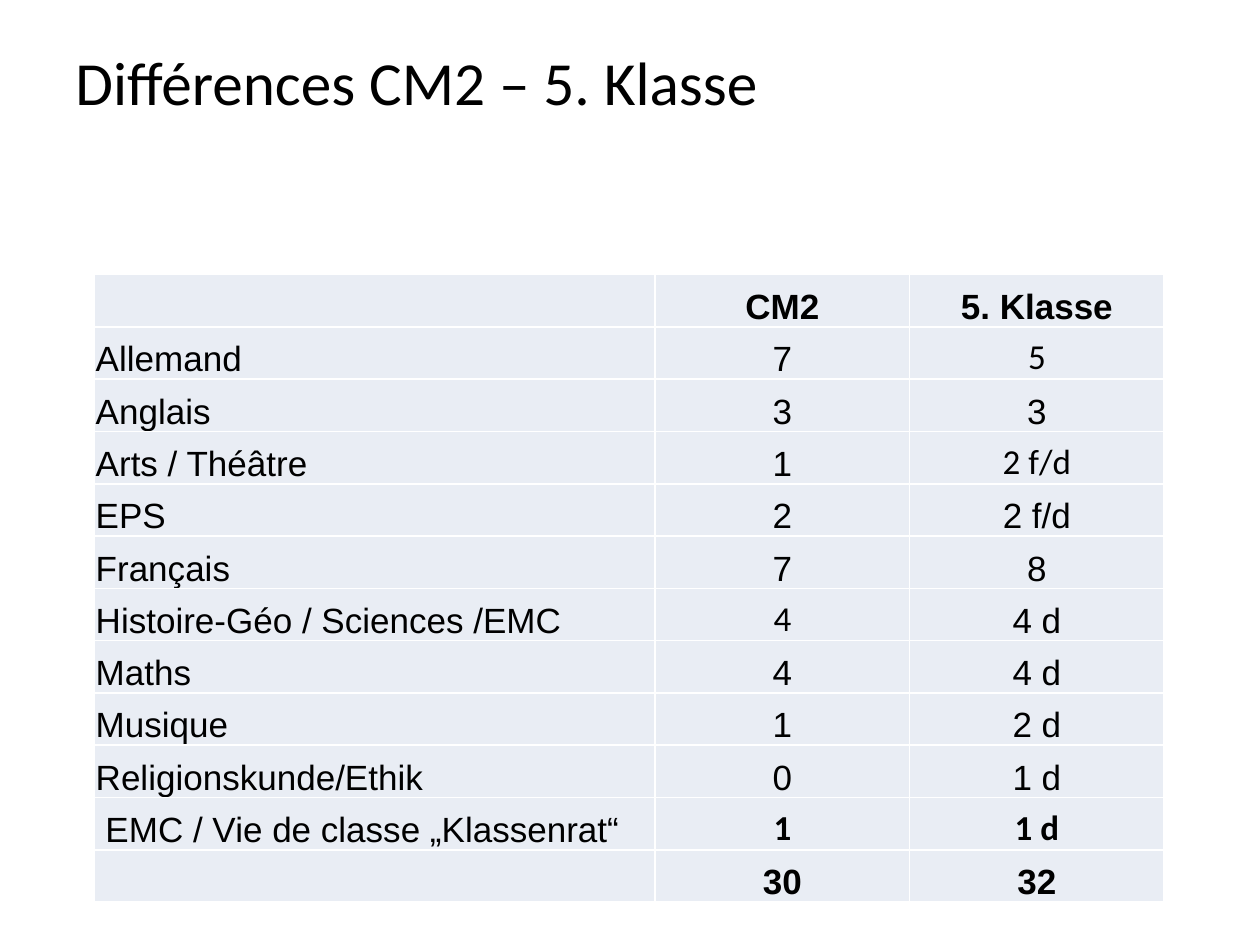
from dataclasses import dataclass

from lxml import etree
from pptx import Presentation
from pptx.dml.color import RGBColor
from pptx.enum.text import MSO_ANCHOR, PP_ALIGN
from pptx.oxml.ns import qn
from pptx.util import Inches, Pt

LEFT, CENTER = PP_ALIGN.LEFT, PP_ALIGN.CENTER
TOP, BOTTOM = MSO_ANCHOR.TOP, MSO_ANCHOR.BOTTOM
BLACK = RGBColor(0x00, 0x00, 0x00)
WHITE = RGBColor(0xFF, 0xFF, 0xFF)
PALE_BLUE = RGBColor(0xE9, 0xED, 0xF4)
COLUMN_WIDTHS = (4.45, 2.02, 2.02)
TABLE_HEIGHT = 4.98
CELL_FORMAT = {
    "margin_left": Inches(0.01),
    "margin_right": Inches(0.01),
    "margin_top": Inches(0.01),
    "margin_bottom": 0,
    "vertical_anchor": BOTTOM,
}


@dataclass(frozen=True)
class Entry:
    text: str
    font: str = "Arial"
    bold: bool = False


@dataclass(frozen=True)
class Row:
    subject: str
    cm2: Entry
    klasse: Entry


ROWS = (
    Row("", Entry("CM2", bold=True), Entry("5. Klasse", bold=True)),
    Row("Allemand", Entry("7"), Entry("5", "Calibri")),
    Row("Anglais", Entry("3"), Entry("3")),
    Row("Arts / Théâtre", Entry("1"), Entry("2 f/d", "Calibri")),
    Row("EPS", Entry("2"), Entry("2 f/d")),
    Row("Français", Entry("7"), Entry("8")),
    Row("Histoire-Géo / Sciences /EMC", Entry("4", "Calibri"), Entry("4 d")),
    Row("Maths", Entry("4"), Entry("4 d")),
    Row("Musique", Entry("1"), Entry("2 d")),
    Row("Religionskunde/Ethik", Entry("0"), Entry("1 d")),
    Row(" EMC / Vie de classe „Klassenrat“", Entry("1", "Calibri", True), Entry("1 d", "Calibri", True)),
    Row("", Entry("30", bold=True), Entry("32", bold=True)),
)


def write(p, entry: Entry, size: float, align) -> None:
    p.alignment = align
    if not entry.text:
        return
    r = p.add_run()
    r.text = entry.text
    for name, value in {"name": entry.font, "size": Pt(size), "bold": entry.bold}.items():
        setattr(r.font, name, value)
    r.font.color.rgb = BLACK


def add_borders(cell) -> None:
    tc_pr = cell._tc.get_or_add_tcPr()
    for i, side in enumerate(("lnL", "lnR", "lnT", "lnB")):
        ln = etree.Element(qn(f"a:{side}"), w=str(Pt(1)))
        fill = etree.SubElement(ln, qn("a:solidFill"))
        etree.SubElement(fill, qn("a:srgbClr"), val=str(WHITE))
        tc_pr.insert(i, ln)


def add_title(s, text: str) -> None:
    tf = s.shapes.add_textbox(Inches(0.5), Inches(0.3), Inches(9), Inches(1.25)).text_frame
    tf.word_wrap = True
    tf.vertical_anchor = TOP
    write(tf.paragraphs[0], Entry(text, "Calibri"), 35, LEFT)


def add_hours_table(s, rows: tuple[Row, ...]) -> None:
    table = s.shapes.add_table(
        len(rows), len(COLUMN_WIDTHS), Inches(0.75), Inches(2.18),
        Inches(sum(COLUMN_WIDTHS)), Inches(TABLE_HEIGHT),
    ).table
    table.first_row = table.horz_banding = False
    for column, width in zip(table.columns, COLUMN_WIDTHS):
        column.width = Inches(width)
    for i, row in enumerate(rows):
        for j, entry in enumerate((Entry(row.subject), row.cm2, row.klasse)):
            cell = table.cell(i, j)
            for name, value in CELL_FORMAT.items():
                setattr(cell, name, value)
            cell.fill.solid()
            cell.fill.fore_color.rgb = PALE_BLUE
            add_borders(cell)
            write(cell.text_frame.paragraphs[0], entry, 20, CENTER if j else LEFT)


def main() -> None:
    """Build the slide comparing weekly hours in CM2 and 5. Klasse."""
    prs = Presentation()
    prs.slide_width, prs.slide_height = Inches(10), Inches(7.5)
    s = prs.slides.add_slide(prs.slide_layouts[6])
    add_title(s, "Différences CM2 – 5. Klasse")
    add_hours_table(s, ROWS)
    prs.save("out.pptx")


if __name__ == "__main__":
    main()
